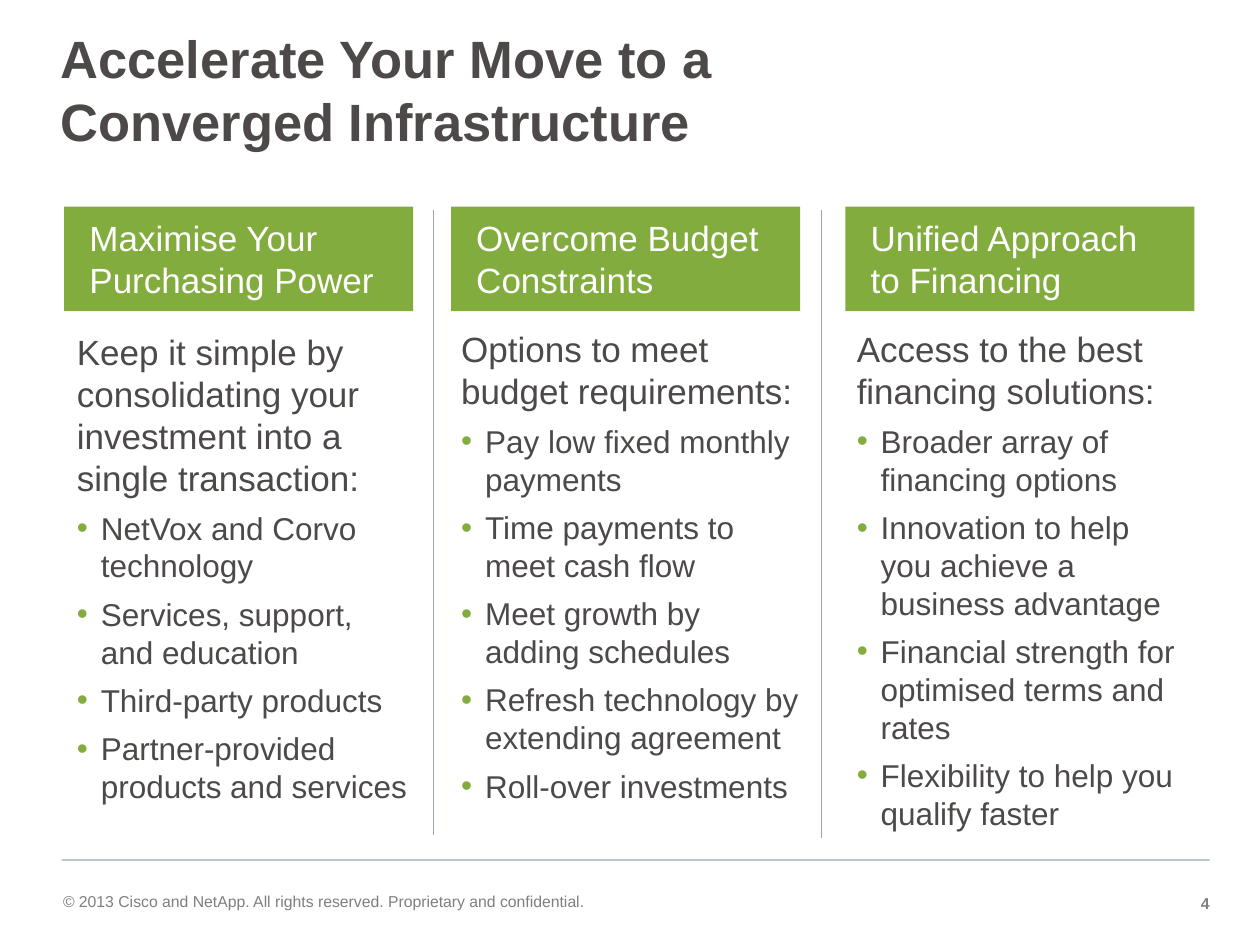
from lxml.etree import SubElement
from pptx import Presentation
from pptx.dml.color import RGBColor
from pptx.enum.shapes import MSO_CONNECTOR as Connector, MSO_SHAPE as Shape
from pptx.enum.text import MSO_ANCHOR as Anchor, PP_ALIGN as Align
from pptx.oxml.ns import qn
from pptx.util import Inches, Pt

COLORS = {"green": "83AC3E", "text": "4C4948", "rule": "99A5B1", "footer": "7F7F7F", "white": "FFFFFF"}
FOOTER = "© 2013 Cisco and NetApp. All rights reserved. Proprietary and confidential."
HEADER_TOP, HEADER_WIDTH, HEADER_HEIGHT = 1.64, 2.77, 0.83
COLUMNS = [
    {
        "left": 0.51, "body": (0.61, 2.62, 2.71, 4.13),
        "header": ["Maximise Your", "Purchasing Power"],
        "intro": "Keep it simple by consolidating your investment into a single transaction:",
        "bullets": ["NetVox and Corvo technology", "Services, support,\nand education",
                    "Third-party products", "Partner-provided products and services"],
    },
    {
        "left": 3.58, "body": (3.66, 2.6, 2.68, 4.38),
        "header": ["Overcome Budget", "Constraints"],
        "intro": "Options to meet budget requirements:",
        "bullets": ["Pay low fixed monthly payments", "Time payments to meet cash flow",
                    "Meet growth by adding schedules", "Refresh technology by extending agreement",
                    "Roll-over investments"],
    },
    {
        "left": 6.71, "body": (6.8, 2.6, 2.7, 4.31),
        "header": ["Unified Approach", "to Financing"],
        "intro": "Access to the best financing solutions:",
        "bullets": ["Broader array of financing options",
                    "Innovation to help\nyou achieve a business advantage",
                    "Financial strength for optimised terms and rates",
                    "Flexibility to help you qualify faster"],
    },
]
DIVIDERS = [(3.44, 6.63), (6.52, 6.65)]


def color(name):
    """Return the named palette color."""
    return RGBColor.from_string(COLORS[name])


def set_margins(frame, left=0, top=0, right=0, bottom=0):
    """Set the inner margins of a wrapping text frame in inches."""
    frame.word_wrap = True
    frame.margin_left, frame.margin_top = Inches(left), Inches(top)
    frame.margin_right, frame.margin_bottom = Inches(right), Inches(bottom)


def style(paragraph, size, color_name, bold=False, align=Align.LEFT):
    """Set the font and alignment of a paragraph."""
    paragraph.alignment = align
    font = paragraph.font
    font.name, font.size, font.bold = "Arial", Pt(size), bold
    font.color.rgb = color(color_name)


def add_bullet(paragraph):
    """Give a paragraph a green hanging bullet."""
    properties = paragraph._p.get_or_add_pPr()
    properties.set("marL", str(Inches(0.19)))
    properties.set("indent", str(-Inches(0.19)))
    bullet_color = SubElement(properties, qn("a:buClr"))
    SubElement(bullet_color, qn("a:srgbClr"), val=COLORS["green"])
    SubElement(properties, qn("a:buFont"), typeface="Arial")
    SubElement(properties, qn("a:buChar"), char="•")


def add_rectangle(slide, box, color_name):
    """Add a flat filled rectangle."""
    shape = slide.shapes.add_shape(Shape.RECTANGLE, *map(Inches, box))
    shape.shadow.inherit = False
    shape.fill.solid()
    shape.fill.fore_color.rgb = color(color_name)
    shape.line.fill.background()
    return shape


def add_frame(slide, box):
    """Add a text box without margins and return its text frame."""
    frame = slide.shapes.add_textbox(*map(Inches, box)).text_frame
    set_margins(frame)
    return frame


def add_label(slide, box, text, **options):
    """Add a small line of footer text."""
    paragraph = add_frame(slide, box).paragraphs[0]
    paragraph.text = text
    style(paragraph, 9, "footer", **options)


def add_title(slide, text):
    """Place and format the title placeholder."""
    title = slide.shapes.title
    title.left, title.top, title.width, title.height = map(Inches, (0.48, 0.32, 9.12, 0.78))
    frame = title.text_frame
    set_margins(frame)
    frame.vertical_anchor = Anchor.MIDDLE
    paragraph = frame.paragraphs[0]
    paragraph.text = text
    style(paragraph, 30, "text", bold=True)


def add_column(slide, column):
    """Add a header block with its introduction and bullet list."""
    header = add_rectangle(slide, (column["left"], HEADER_TOP, HEADER_WIDTH, HEADER_HEIGHT), "green")
    frame = header.text_frame
    set_margins(frame, 0.2, 0.05, 0.1, 0.05)
    frame.vertical_anchor = Anchor.MIDDLE
    frame.text = "\n".join(column["header"])
    for paragraph in frame.paragraphs:
        style(paragraph, 20, "white")

    frame = add_frame(slide, column["body"])
    introduction = frame.paragraphs[0]
    introduction.text = column["intro"]
    introduction.space_after = Pt(6)
    style(introduction, 20, "text")
    for text in column["bullets"]:
        paragraph = frame.add_paragraph()
        paragraph.text = text
        paragraph.space_after = Pt(6)
        add_bullet(paragraph)
        style(paragraph, 18, "text")


def add_divider(slide, x, bottom):
    """Add a thin vertical line between two columns."""
    ends = map(Inches, (x, 1.67, x, bottom))
    line = slide.shapes.add_connector(Connector.STRAIGHT, *ends)
    line.line.color.rgb = color("rule")
    line.line.width = Pt(0.75)
    SubElement(line._element.spPr, qn("a:effectLst"))


def main():
    """Build and save the slide."""
    presentation = Presentation()
    presentation.slide_width, presentation.slide_height = Inches(10), Inches(7.5)
    slide = presentation.slides.add_slide(presentation.slide_layouts[5])
    add_title(slide, "Accelerate Your Move to a\nConverged Infrastructure")
    add_rectangle(slide, (0.49, 6.82, 9.11, 0.01), "rule")
    for column in COLUMNS:
        add_column(slide, column)
    for x, bottom in DIVIDERS:
        add_divider(slide, x, bottom)
    add_label(slide, (8.95, 7.09, 0.65, 0.19), "4", bold=True, align=Align.RIGHT)
    add_label(slide, (0.5, 7.08, 5.52, 0.28), FOOTER)
    presentation.save("out.pptx")


if __name__ == "__main__":
    main()
